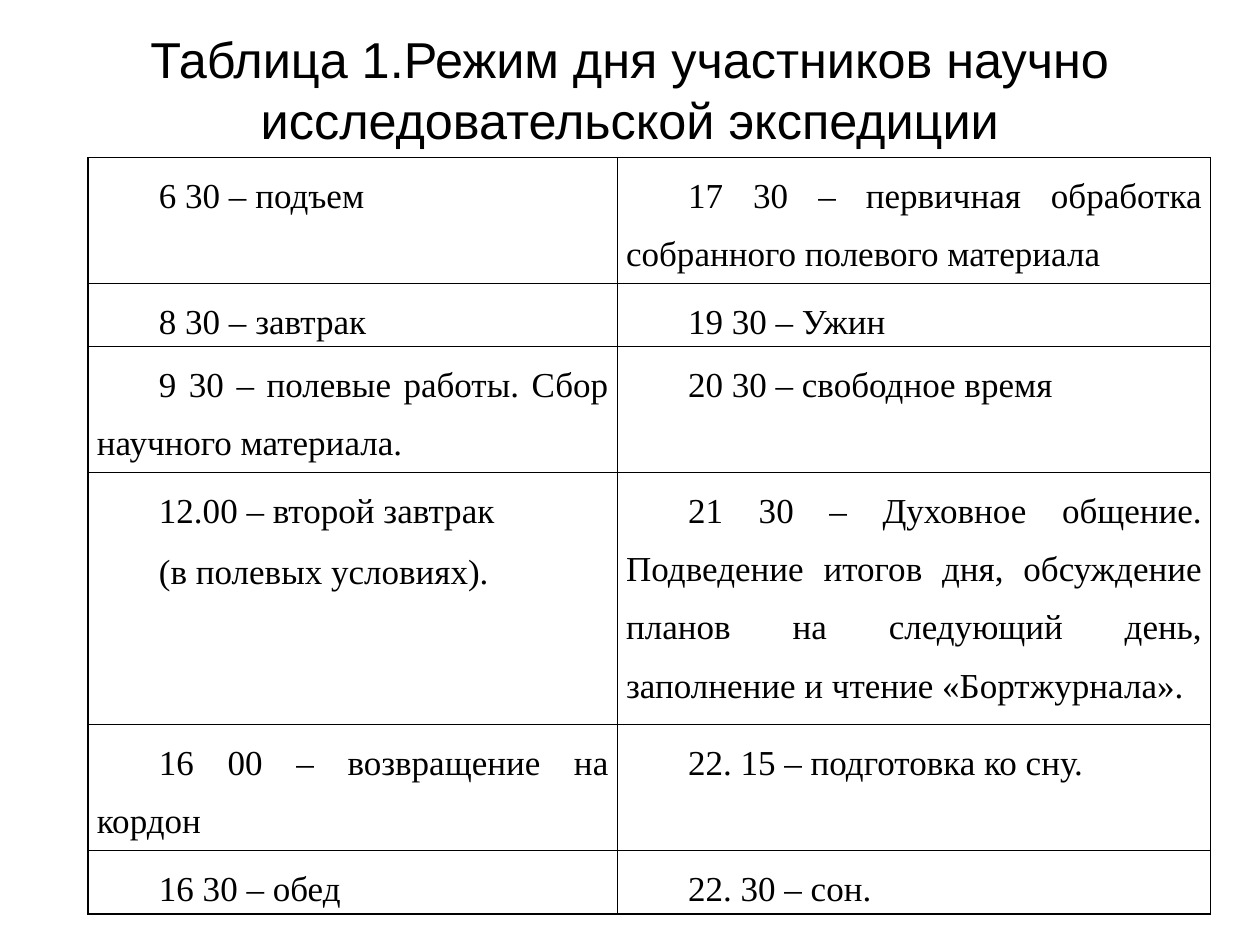
"""Build a slide with the daily schedule of a research expedition."""
from lxml.etree import SubElement
from pptx import Presentation
from pptx.dml.color import RGBColor
from pptx.enum.text import MSO_ANCHOR, PP_ALIGN
from pptx.oxml.ns import qn
from pptx.util import Pt

TITLE = "Таблица 1.Режим дня участников научно исследовательской экспедиции"
SCHEDULE = [
    (["6 30 – подъем"],
     ["17 30 – первичная обработка собранного полевого материала"]),
    (["8 30 – завтрак"], ["19 30 – Ужин"]),
    (["9 30 – полевые работы. Сбор научного материала."],
     ["20 30 – свободное время"]),
    (["12.00 – второй завтрак", "(в полевых условиях)."],
     ["21 30 – Духовное общение. Подведение итогов дня, обсуждение планов "
      "на следующий день, заполнение и чтение «Бортжурнала»."]),
    (["16 00 – возвращение на кордон"], ["22. 15 – подготовка ко сну."]),
    (["16 30 – обед"], ["22. 30 – сон."]),
]
COL_WIDTHS = [302.4, 339.1]
ROW_HEIGHTS = [72, 36, 72, 108, 65.5, 36]
BLACK = "000000"


def color(value):
    return RGBColor.from_string(value)


def add_run(p, text, font, size):
    r = p.add_run()
    r.text = text
    r.font.name = font
    r.font.size = Pt(size)
    r.font.color.rgb = color(BLACK)


def add_borders(cell):
    tcPr = cell._tc.get_or_add_tcPr()
    for side in ("a:lnL", "a:lnR", "a:lnT", "a:lnB"):
        ln = SubElement(tcPr, qn(side), w=str(Pt(1)))
        fill = SubElement(ln, qn("a:solidFill"))
        SubElement(fill, qn("a:srgbClr"), val=BLACK)


def fill_cell(cell, lines, align):
    add_borders(cell)
    cell.fill.background()
    cell.margin_left = cell.margin_right = Pt(5.04)
    cell.margin_top = cell.margin_bottom = 0
    tf = cell.text_frame
    for i, line in enumerate(lines):
        p = tf.add_paragraph() if i else tf.paragraphs[0]
        p._p.get_or_add_pPr().set("indent", str(Pt(35.4)))
        p.alignment = align
        p.line_spacing = 1.5
        p.space_before = Pt(1.8 if i else 0)
        add_run(p, line, "Times New Roman", 20)


def add_title(s):
    tf = s.shapes.add_textbox(Pt(36), Pt(21.6), Pt(648), Pt(90)).text_frame
    tf.word_wrap = True
    tf.vertical_anchor = MSO_ANCHOR.MIDDLE
    tf.margin_bottom = Pt(35)
    p = tf.paragraphs[0]
    p.alignment = PP_ALIGN.CENTER
    add_run(p, TITLE, "Arial", 28.8)


def add_schedule(s):
    table = s.shapes.add_table(
        len(SCHEDULE), len(COL_WIDTHS), Pt(50.4), Pt(90),
        Pt(sum(COL_WIDTHS)), Pt(sum(ROW_HEIGHTS))).table
    table.first_row = table.horz_banding = False
    for col, width in zip(table.columns, COL_WIDTHS):
        col.width = Pt(width)
    for row, height, entries in zip(table.rows, ROW_HEIGHTS, SCHEDULE):
        row.height = Pt(height)
        for cell, lines in zip(row.cells, entries):
            first = lines == SCHEDULE[0][0]
            fill_cell(cell, lines, PP_ALIGN.LEFT if first else PP_ALIGN.JUSTIFY)


def main():
    prs = Presentation()
    prs.slide_width, prs.slide_height = Pt(720), Pt(540)
    s = prs.slides.add_slide(prs.slide_layouts[6])
    add_title(s)
    add_schedule(s)
    prs.save("out.pptx")


if __name__ == "__main__":
    main()
